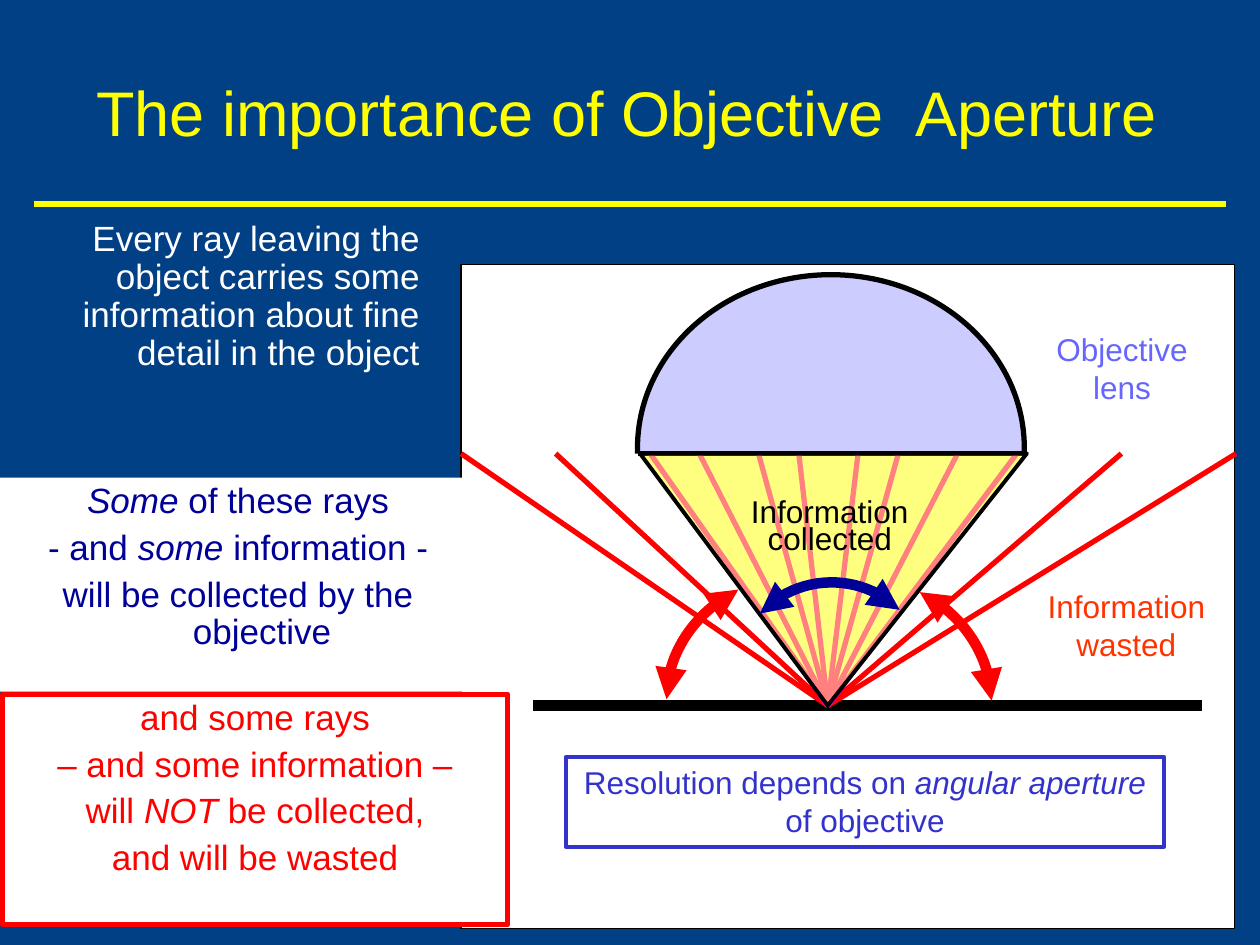
from collections import namedtuple

from lxml.etree import SubElement
from pptx import Presentation
from pptx.dml.color import RGBColor
from pptx.enum.shapes import MSO_CONNECTOR, MSO_SHAPE
from pptx.enum.text import MSO_ANCHOR, PP_ALIGN
from pptx.oxml.ns import qn
from pptx.util import Inches, Pt

CELL = 0.1
COLUMNS, ROWS = 100, 75
Box = namedtuple("Box", "left top width height")

NAVY, YELLOW, WHITE, BLACK = "014085", "FFFF00", "FFFFFF", "000000"
RED, MAGENTA, INK, LILAC = "FF0000", "FF00FF", "000099", "CCCCFF"
VIOLET, ORANGE, INDIGO = "6666FF", "FF3300", "3333CC"


def rgb(code):
    """Turn a hex string into a colour."""
    return RGBColor.from_string(code)


def cells(*counts):
    """Turn grid cells into lengths."""
    return [Inches(count * CELL) for count in counts]


def within(box, left, top, width, height):
    """Give the box at a grid position inside another box."""
    return Box(box.left + left, box.top + top, width, height)


def spot(box, point):
    """Give the slide position of a point inside a box."""
    return cells(box.left + point[0], box.top + point[1])


def assign(target, values):
    """Set each named attribute of the target."""
    for name, value in values.items():
        setattr(target, name, value)


def outline(item, color, weight):
    """Draw the line of an item in a colour and weight."""
    item.line.color.rgb = rgb(color)
    item.line.width = Pt(weight)


def paint(shape, fill=None, line=None, weight=0.75):
    """Set the fill and line of a shape, leaving out what is not given."""
    shape.shadow.inherit = False
    if fill:
        shape.fill.solid()
        shape.fill.fore_color.rgb = rgb(fill)
    else:
        shape.fill.background()
    if line:
        outline(shape, line, weight)
    else:
        shape.line.fill.background()
    return shape


def add_preset(slide, kind, box, **look):
    """Add a preset shape that fills the box."""
    return paint(slide.shapes.add_shape(kind, *cells(*box)), **look)


def add_line(slide, box, start, end, color, weight):
    """Add a straight line between two points of a box."""
    line = slide.shapes.add_connector(
        MSO_CONNECTOR.STRAIGHT, *spot(box, start), *spot(box, end))
    outline(line, color, weight)
    SubElement(line._element.spPr, qn("a:effectLst"))


def add_outline(slide, box, points, closed, **look):
    """Add a freeform through points of a box."""
    places = [spot(box, point) for point in points]
    builder = slide.shapes.build_freeform(*places[0])
    builder.add_line_segments(places[1:], close=closed)
    return paint(builder.convert_to_shape(), **look)


def add_arc_arrow(slide, box, controls, color):
    """Add a double-headed arrow along a cubic curve."""
    steps = 24
    points = []
    for step in range(steps + 1):
        t = step / steps
        weights = ((1 - t) ** 3, 3 * t * (1 - t) ** 2, 3 * t * t * (1 - t), t ** 3)
        points.append([sum(w * c for w, c in zip(weights, axis))
                       for axis in zip(*controls)])
    arc = add_outline(slide, box, points, False, line=color, weight=6)
    for end in ("a:headEnd", "a:tailEnd"):
        SubElement(arc.line._get_or_add_ln(), qn(end), type="triangle")


def write(shape, lines, color, size=18, align=PP_ALIGN.CENTER, spacing=None,
          gap=0, hanging=0, wrap=True, anchor=MSO_ANCHOR.TOP):
    """Write lines into a shape, with *marked* words in italics."""
    frame = shape.text_frame
    assign(frame, {"word_wrap": wrap, "vertical_anchor": anchor})
    for index, line in enumerate(lines):
        paragraph = frame.add_paragraph() if index else frame.paragraphs[0]
        assign(paragraph, {"alignment": align, "line_spacing": spacing,
                           "space_before": Pt(gap if index else 0)})
        if hanging:
            properties = paragraph._p.get_or_add_pPr()
            properties.set("marL", str(Inches(hanging)))
            properties.set("indent", str(-Inches(hanging)))
        for part, words in enumerate(line.split("*")):
            if words:
                run = paragraph.add_run()
                run.text = words
                assign(run.font, {"name": "Arial", "size": Pt(size),
                                  "italic": part % 2 == 1})
                run.font.color.rgb = rgb(color)


def add_label(slide, box, lines, color, **style):
    """Add a text box that fills the box."""
    write(slide.shapes.add_textbox(*cells(*box)), lines, color, **style)


def heading(slide, box):
    """Place the title and the rule below it."""
    add_label(slide, within(box, 2.1, 2.6, 95.3, 12.5),
              ["The importance of Objective  Aperture"], YELLOW,
              size=36, anchor=MSO_ANCHOR.MIDDLE)
    add_line(slide, box, (2.7, box.height), (97.3, box.height), YELLOW, 3)


def aperture_diagram(slide, box):
    """Place the lens, its rays and their labels on a white panel."""
    lens_level, lens_left, lens_right = 15, 14, 44.7
    focus = (29.1, 35)
    add_preset(slide, MSO_SHAPE.RECTANGLE, box, fill=WHITE, line=BLACK)
    add_preset(slide, MSO_SHAPE.OVAL,
               within(box, lens_left, 0.8, lens_right - lens_left, 27.5),
               fill=LILAC, line=BLACK, weight=3)
    add_preset(slide, MSO_SHAPE.RECTANGLE,
               within(box, 9.5, lens_level, 38.5, 15), fill=WHITE)
    add_line(slide, box, (lens_left, lens_level), (lens_right, lens_level), BLACK, 3)
    add_line(slide, box, (5.7, focus[1]), (58.8, focus[1]), BLACK, 6)

    rays = {RED: (0, 7.5, 52.4, 61.5),
            MAGENTA: (15, 18.9, 23.6, 26.8, 31.5, 34.7, 39.4, 44.1)}
    for color, ends in rays.items():
        for end in ends:
            add_line(slide, box, focus, (end, lens_level), color, 3)
    cone = add_outline(slide, box, [(14.2, lens_level), (44.9, lens_level), focus],
                       True, fill=YELLOW, line=BLACK, weight=2.25)
    tint = cone._element.spPr.find(qn("a:solidFill")).find(qn("a:srgbClr"))
    SubElement(tint, qn("a:alpha"), val="50000")

    add_label(slide, within(box, 46.2, 4.7, 12.5, 7.1),
              ["Objective", "lens"], VIOLET, wrap=False)
    add_label(slide, within(box, 21.3, 18.4, 15.9, 5.4),
              ["Information", "collected"], BLACK, spacing=0.7)
    add_label(slide, within(box, 45.5, 25.1, 14.6, 7.1),
              ["Information", "wasted"], ORANGE, wrap=False)

    arcs = [(INK, [(34.8, 27.4), (31.7, 24.4), (26.7, 24.5), (23.7, 27.7)]),
            (RED, [(22, 25.8), (18.5, 27.6), (16.3, 30.9), (16.3, 34.5)]),
            (RED, [(36.4, 26), (39.8, 27.7), (42, 31), (42.1, 34.6)])]
    for color, controls in arcs:
        add_arc_arrow(slide, box, controls, color)

    conclusion = add_preset(slide, MSO_SHAPE.RECTANGLE,
                            within(box, 8.3, 39.1, 47.5, 7.1),
                            line=INDIGO, weight=2.25)
    write(conclusion, ["Resolution depends on *angular aperture*", "of objective"],
          INDIGO, wrap=False)


def explanation(slide, box):
    """Place the three statements about the rays, one below the other."""
    style = {"size": 20, "spacing": 0.9, "gap": 5, "hanging": 0.38}
    add_label(slide, within(box, 0.4, 0, 33.9, 19.3),
              ["Every ray leaving the object carries some information "
               "about fine detail in the object"],
              WHITE, align=PP_ALIGN.RIGHT, **style)
    wasted = add_preset(slide, MSO_SHAPE.RECTANGLE, within(box, 0.2, 38, 40.1, 18.3),
                        fill=WHITE, line=RED, weight=3)
    write(wasted, ["and some rays", "– and some information –",
                   "will *NOT* be collected,", "and will be wasted"], RED, **style)
    collected = add_preset(slide, MSO_SHAPE.RECTANGLE,
                           within(box, 0, 20.8, 37.8, 17), fill=WHITE)
    write(collected, ["*Some* of these rays", "- and *some* information -",
                      "will be collected by the objective"], INK, **style)


def main():
    """Build the slide and save it."""
    deck = Presentation()
    deck.slide_width, deck.slide_height = cells(COLUMNS, ROWS)
    slide = deck.slides.add_slide(deck.slide_layouts[6])
    slide.background.fill.solid()
    slide.background.fill.fore_color.rgb = rgb(NAVY)
    heading(slide, Box(0, 0, COLUMNS, 16.2))
    aperture_diagram(slide, Box(36.6, 21, 61.4, 52.7))
    explanation(slide, Box(0, 17.1, 40.3, 56.3))
    deck.save("out.pptx")


if __name__ == "__main__":
    main()
